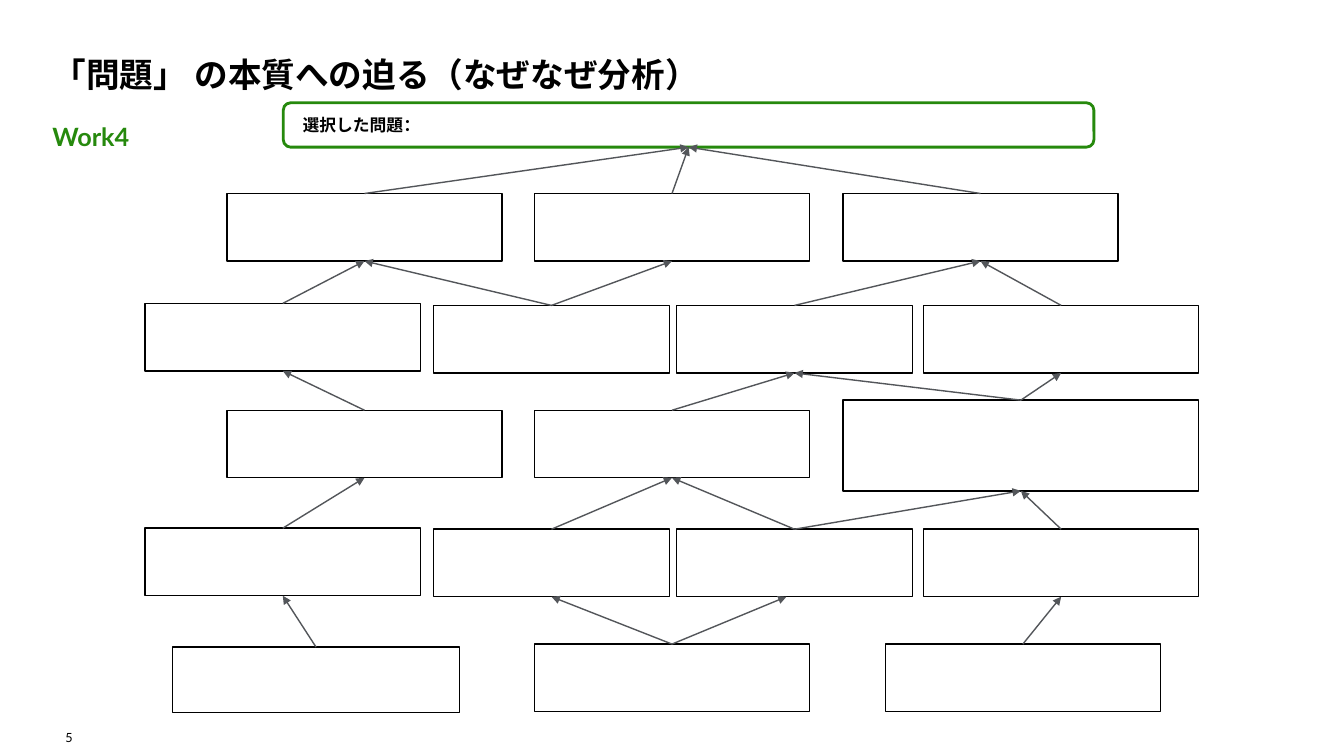
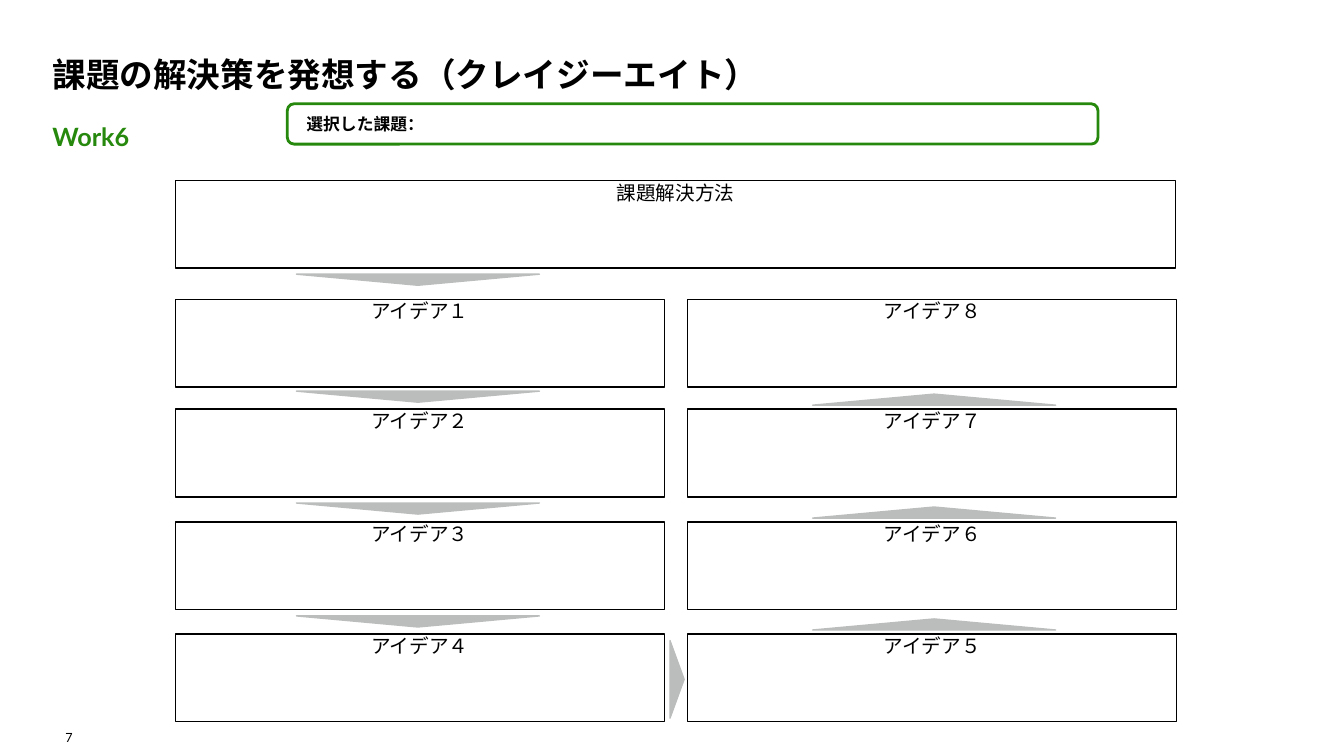
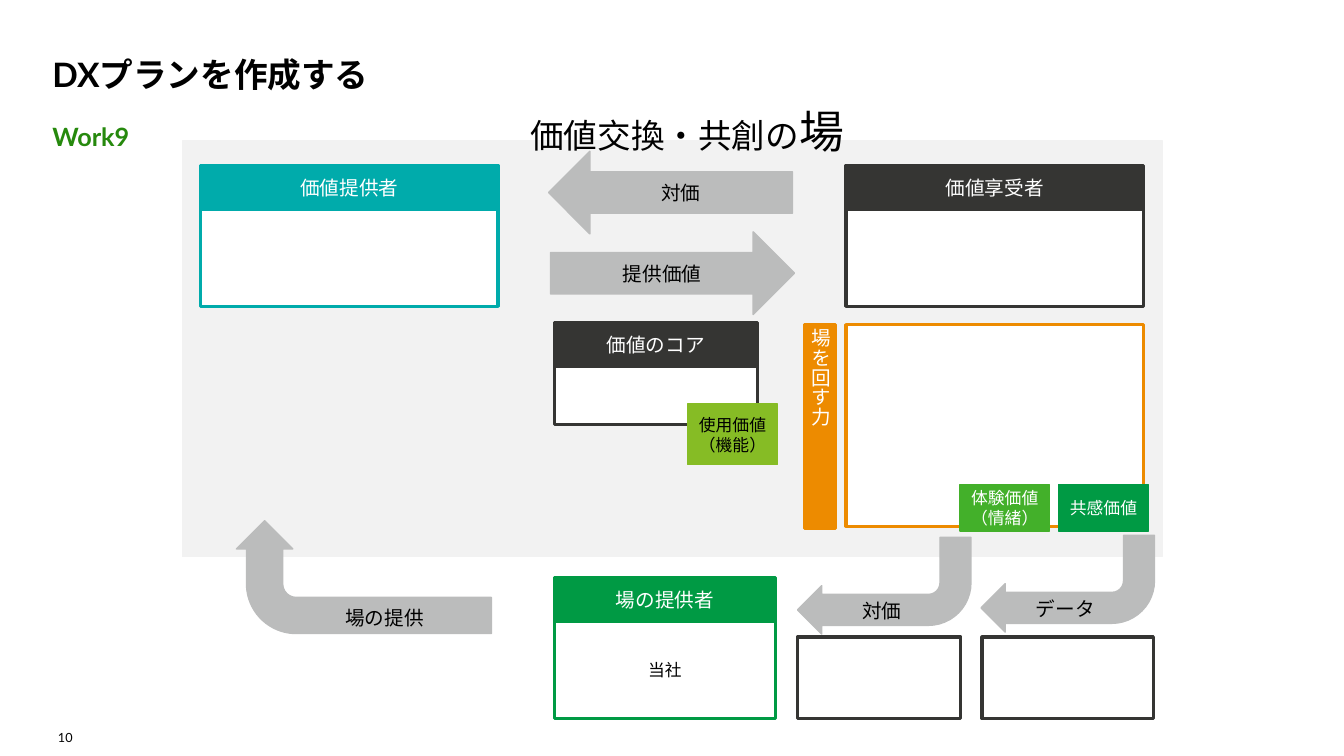
from pptx import Presentation
from pptx.dml.color import RGBColor
from pptx.enum.shapes import MSO_CONNECTOR, MSO_SHAPE
from pptx.enum.text import MSO_ANCHOR, PP_ALIGN
from pptx.oxml.ns import qn
from pptx.util import Inches, Pt
from lxml.etree import SubElement

COLORS = {
    "black": "000000", "white": "FFFFFF", "green": "26890D", "link": "53565A",
    "gray": "BBBCBC", "panel": "F2F2F2", "teal": "00ABAB", "dark": "353533",
    "emerald": "009A44", "orange": "ED8B00", "lime": "86BC25", "leaf": "43B02A",
}
CJK = "Noto Sans CJK JP"


def rgb(name):
    return RGBColor.from_string(COLORS[name])


def add_run(paragraph, text, size=14, font=CJK, color="black", bold=False):
    run = paragraph.add_run()
    run.text = text
    run.font.size = Pt(size)
    run.font.name = font
    run.font.bold = bold
    run.font.color.rgb = rgb(color)
    SubElement(run.font._element, qn("a:ea")).set("typeface", CJK)


def write(shape, text, align=PP_ALIGN.CENTER, anchor=MSO_ANCHOR.MIDDLE,
          inset=0, left_inset=None, wrap=True, **style):
    """Fill a shape with one paragraph per line and return the last one."""
    frame = shape.text_frame
    frame.word_wrap = wrap
    frame.vertical_anchor = anchor
    frame.margin_top = frame.margin_right = frame.margin_bottom = Inches(inset)
    frame.margin_left = Inches(inset if left_inset is None else left_inset)
    for number, line in enumerate(text.split("\n")):
        paragraph = frame.add_paragraph() if number else frame.paragraphs[0]
        paragraph.alignment = align
        add_run(paragraph, line, **style)
    return paragraph


class Deck:
    def __init__(self):
        self.file = Presentation()
        self.file.slide_width, self.file.slide_height = Inches(13.33), Inches(7.5)
        self.slide = None

    def new_slide(self, page, work, title, title_font="Lato"):
        self.slide = self.file.slides.add_slide(self.file.slide_layouts[6])
        self.label(page, 0.52, 7.2, 0.2, 0.19, align=PP_ALIGN.RIGHT,
                   anchor=MSO_ANCHOR.BOTTOM, wrap=False, size=9, font="Lato")
        self.label(work, 0.52, 1.1, 12.28, 0.51, align=PP_ALIGN.LEFT,
                   size=18, font="Lato", color="green", bold=True)
        self.label(title, 0.52, 0.12, 12.28, 0.81, align=PP_ALIGN.LEFT,
                   anchor=MSO_ANCHOR.BOTTOM, size=24, font=title_font, bold=True)

    def label(self, text, left, top, width, height, **style):
        box = self.slide.shapes.add_textbox(*map(Inches, (left, top, width, height)))
        return write(box, text, **style)

    def shape(self, left, top, width, height, fill="white", line=None, weight=1,
              kind=MSO_SHAPE.RECTANGLE, rotation=0, text=None, **style):
        shape = self.slide.shapes.add_shape(
            kind, *map(Inches, (left, top, width, height)))
        shape.shadow.inherit = False
        shape.rotation = rotation
        shape.fill.solid()
        shape.fill.fore_color.rgb = rgb(fill)
        shape.line.color.rgb = rgb(line or fill)
        shape.line.width = Pt(weight)
        if text:
            write(shape, text, **style)
        return shape

    def theme_box(self, text, left, top, height):
        return self.shape(left, top, 8.04, height, line="green", weight=2,
                          kind=MSO_SHAPE.ROUNDED_RECTANGLE, text=text,
                          align=PP_ALIGN.LEFT, left_inset=0.17,
                          size=12, font="Calibri", bold=True)

    def card(self, text, left, top, width, body_height, color, body=None):
        self.shape(left, top, width, 0.44, color, weight=2.25, text=text,
                   inset=0.04, color="white")
        self.shape(left, top + 0.44, width, body_height, line=color, weight=2.25,
                   text=body, inset=0.04, size=12)

    def bent_arrow(self, left, top, width, height, rotation):
        arrow = self.shape(left, top, width, height, "gray",
                           kind=MSO_SHAPE.BENT_ARROW, rotation=rotation)
        for number, value in enumerate((0.32, 0.25, 0.25, 0.44)):
            arrow.adjustments[number] = value

    def link(self, cause, effect, shift=0):
        """Arrow from the top of a cause to the bottom of its effect."""
        arrow = self.slide.shapes.add_connector(MSO_CONNECTOR.STRAIGHT, 0, 0, 0, 0)
        arrow.begin_connect(cause, 0)
        if shift:
            arrow.end_x = effect.left + effect.width // 2 + Inches(shift)
            arrow.end_y = effect.top + effect.height
        else:
            arrow.end_connect(effect, 2)
        arrow.line.color.rgb = rgb("link")
        arrow.line.width = Pt(1)
        SubElement(arrow.line._get_or_add_ln(), qn("a:tailEnd")).set("type", "triangle")
        SubElement(arrow._element.spPr, qn("a:effectLst"))


def why_why_slide(deck):
    deck.new_slide("5", "Work4", "「問題」 の本質への迫る（なぜなぜ分析）", "Calibri")
    problem = deck.theme_box("選択した問題：", 2.81, 1.02, 0.44)

    # Causes, level by level: left, top, width, height
    wide, narrow = (2.73, 0.67), (2.34, 0.67)
    levels = [
        [(2.25, 1.92, *wide), (5.3, 1.92, *wide), (8.36, 1.92, *wide)],
        [(1.44, 3.01, *wide), (4.3, 3.03, *narrow),
         (6.71, 3.03, *narrow), (9.16, 3.03, *wide)],
        [(2.25, 4.07, *wide), (5.3, 4.07, *wide), (8.36, 3.97, 3.53, 0.9)],
        [(1.44, 5.24, *wide), (4.3, 5.25, *narrow),
         (6.71, 5.25, *narrow), (9.16, 5.25, *wide)],
        [(1.71, 6.42, 2.85, 0.65), (5.3, 6.39, *wide), (8.78, 6.39, *wide)],
    ]
    causes = [[problem]]
    causes += [[deck.shape(*box, line="black") for box in level] for level in levels]

    # Links to the level above: cause, effect and shift of the tip
    links = [
        [(0, 0), (1, 0), (2, 0)],
        [(0, 0), (1, 0), (1, 1), (2, 2), (3, 2)],
        [(0, 0), (1, 2), (2, 2), (2, 3)],
        [(0, 0), (1, 1), (2, 1), (2, 2), (3, 2)],
        [(0, 0), (1, 1), (1, 2, -0.08), (2, 3)],
    ]
    for above, level, pairs in zip(causes, causes[1:], links):
        for cause, effect, *shift in pairs:
            deck.link(level[cause], above[effect], *shift)


def crazy_eight_slide(deck):
    deck.new_slide("7", "Work6", "課題の解決策を発想する（クレイジーエイト）")
    deck.theme_box("選択した課題：", 2.85, 1.03, 0.4)

    # Solution and ideas, down the left column and up the right one
    idea_style = dict(line="black", anchor=MSO_ANCHOR.TOP, font="Calibri")
    deck.shape(1.74, 1.79, 9.92, 0.87, text="課題解決方法", **idea_style)
    rows = [2.97, 4.06, 5.18, 6.29]
    for top, down, up in zip(rows, "１２３４", "８７６５"):
        for left, number in ((1.74, down), (6.82, up)):
            deck.shape(left, top, 4.85, 0.87, text="アイデア" + number, **idea_style)

    # Flow markers
    markers = [(2.94, top, 2.41, 0.11, 180) for top in (2.72, 3.88, 4.99, 6.11)]
    markers += [(8.06, top - 0.15, 2.41, 0.11, 0) for top in rows[1:]]
    markers.append((6.33, 6.67, 0.77, 0.14, 90))
    for *box, rotation in markers:
        deck.shape(*box, "gray", kind=MSO_SHAPE.ISOSCELES_TRIANGLE, rotation=rotation)


def dx_plan_slide(deck):
    deck.new_slide("10", "Work9", "DXプランを作成する")

    # Place of exchange
    deck.shape(1.81, 1.4, 9.72, 4.12, "panel")
    heading = deck.label("価値交換・共創の", 5.26, 1.03, 3.28, 0.54, size=24,
                         align=PP_ALIGN.LEFT, anchor=MSO_ANCHOR.TOP)
    add_run(heading, "場", size=32)
    for text, left, top, kind in (
            ("提供価値", 5.46, 2.3, MSO_SHAPE.RIGHT_ARROW),
            ("対価", 5.44, 1.5, MSO_SHAPE.LEFT_ARROW)):
        deck.shape(left, top, 2.42, 0.82, "gray", kind=kind, text=text)

    # Bent arrows with their labels
    for text, left, top, *arrow in (
            ("場の提供", 2.34, 5.91, 3.05, 4.46, 1.12, 2.53, 270),
            ("対価", 7.27, 5.84, 7.91, 5.33, 1.72, 0.96, 180),
            ("データ", 9.09, 5.82, 9.73, 5.31, 1.72, 0.96, 180)):
        deck.bent_arrow(*arrow)
        deck.label(text, left, top, 2.95, 0.44, inset=0.04)

    # Players and core value
    deck.card("価値提供者", 1.99, 1.64, 2.95, 0.96, "teal")
    deck.card("価値享受者", 8.39, 1.64, 2.95, 0.96, "dark")
    deck.card("価値のコア", 5.5, 3.2, 2.01, 0.57, "dark")
    deck.card("場の提供者", 5.5, 5.73, 2.19, 0.96, "emerald", body="当社")

    # Driving force and empty fields
    force = deck.shape(7.98, 3.22, 0.31, 2.02, "orange", weight=2.25,
                       text="場を回す力", inset=0.04, color="white")
    force.text_frame._txBody.bodyPr.set("vert", "eaVert")
    deck.shape(8.39, 3.22, 2.95, 2, line="orange", weight=2.25)
    for left, width in ((7.91, 1.62), (9.74, 1.7)):
        deck.shape(left, 6.32, width, 0.81, line="dark", weight=2.25)

    # Kinds of value
    for text, left, top, height, fill, color in (
            ("共感価値", 10.5, 4.81, 0.46, "emerald", "white"),
            ("使用価値\n（機能）", 6.82, 4.01, 0.6, "lime", "black"),
            ("体験価値\n（情緒）", 9.52, 4.81, 0.46, "leaf", "white")):
        deck.shape(left, top, 0.89, height, fill, text=text, size=12, color=color)


def main():
    deck = Deck()
    why_why_slide(deck)
    crazy_eight_slide(deck)
    dx_plan_slide(deck)
    deck.file.save("out.pptx")


if __name__ == "__main__":
    main()
